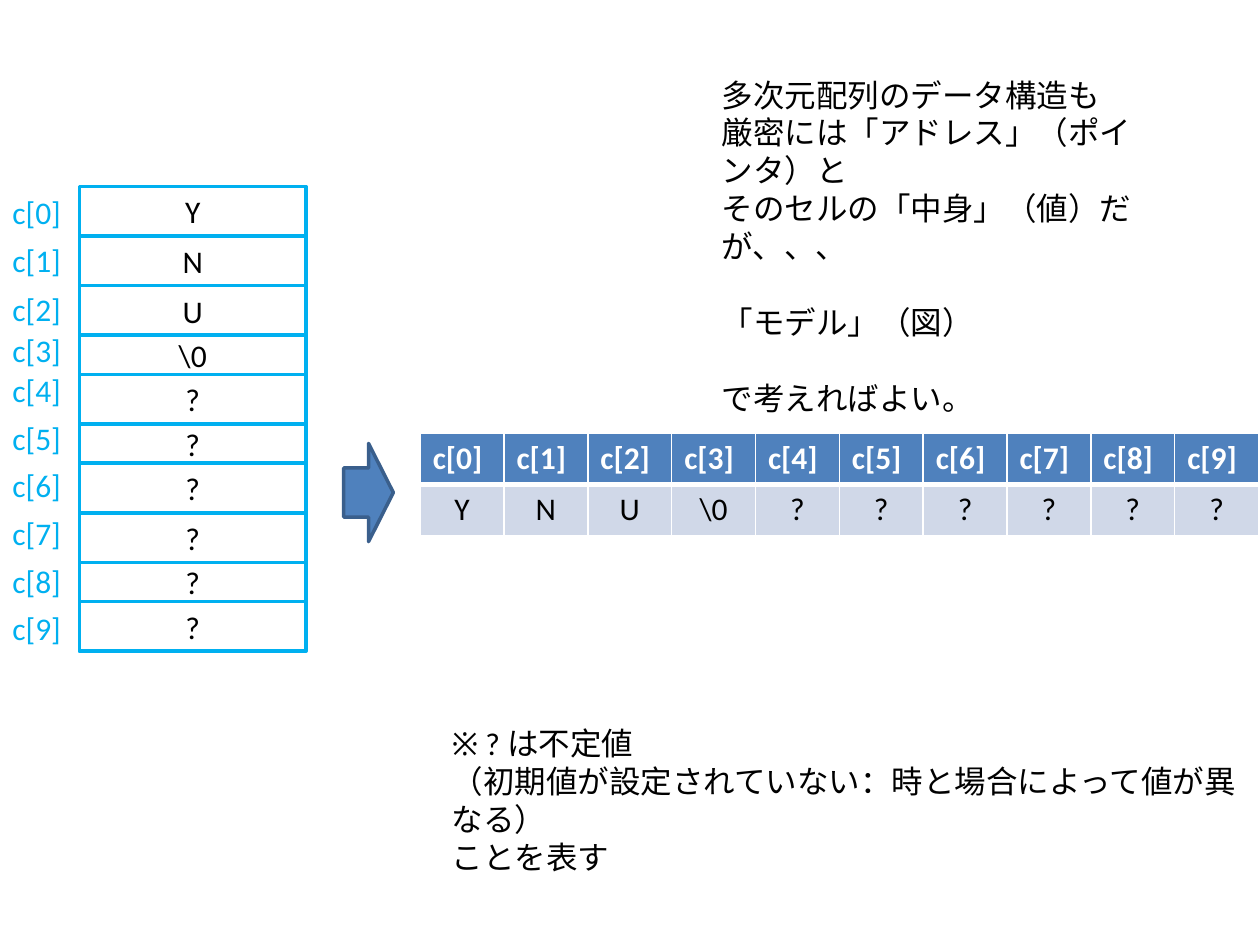
from itertools import accumulate

from lxml.etree import SubElement
from pptx import Presentation
from pptx.dml.color import RGBColor
from pptx.enum.shapes import MSO_SHAPE
from pptx.enum.text import MSO_ANCHOR, PP_ALIGN
from pptx.oxml.ns import qn
from pptx.util import Cm, Pt

COLORS = {
    "black": "000000",
    "white": "FFFFFF",
    "cyan": "00B0F0",
    "blue": "4F81BD",
    "dark_blue": "3A5F8C",
    "pale_blue": "D0D8E8",
}
VALUES = ["Y", "N", "U", "\\0"] + ["?"] * 6
NAMES = [f"c[{index}]" for index in range(len(VALUES))]

# Memory column, in centimetres
COLUMN_TOP = 3.76
TALL, SHORT = 1.0, 0.79
CELL_HEIGHTS = [SHORT if index in (3, 5, 8) else TALL for index in range(len(VALUES))]
CELL_TOPS = accumulate(CELL_HEIGHTS, initial=COLUMN_TOP)
LABEL_TOPS = accumulate([0.98] * 2 + [0.82] * 2 + [0.96] * 5, initial=COLUMN_TOP)


def color(name):
    return RGBColor.from_string(COLORS[name])


def write_text(frame, lines, ink="black", bold=False, align=PP_ALIGN.LEFT,
               wrap=True, spaced_lines=()):
    """Write one paragraph per line; spaced_lines get a line's gap above."""
    frame.word_wrap = wrap
    for index, line in enumerate(lines):
        paragraph = frame.paragraphs[0] if index == 0 else frame.add_paragraph()
        paragraph.alignment = align
        if index in spaced_lines:
            paragraph.space_before = Pt(22)
        run = paragraph.add_run()
        run.text = line
        run.font.name = "Calibri"
        run.font.size = Pt(18)
        run.font.bold = bold
        run.font.color.rgb = color(ink)


class ArraySlide:
    """Holds the current slide and draws its elements; lengths in centimetres."""

    def __init__(self, slide):
        self.slide = slide

    def text(self, lines, left, top, width, height, **style):
        box = self.slide.shapes.add_textbox(Cm(left), Cm(top), Cm(width), Cm(height))
        write_text(box.text_frame, lines, **style)

    def shape(self, kind, left, top, width, height, line, fill=None):
        shape = self.slide.shapes.add_shape(kind, Cm(left), Cm(top), Cm(width), Cm(height))
        shape.shadow.inherit = False
        shape.line.color.rgb = color(line)
        shape.line.width = Pt(2)
        if fill:
            shape.fill.solid()
            shape.fill.fore_color.rgb = color(fill)
        else:
            shape.fill.background()
        return shape

    def memory_cell(self, value, top, height):
        shape = self.shape(MSO_SHAPE.RECTANGLE, 1.6, top, 4.57, height, "cyan")
        shape.text_frame.vertical_anchor = MSO_ANCHOR.MIDDLE
        write_text(shape.text_frame, [value], align=PP_ALIGN.CENTER)

    def border(self, cell, side, points):
        line = SubElement(cell._tc.get_or_add_tcPr(), qn(f"a:ln{side}"), w=str(Pt(points)))
        fill = SubElement(line, qn("a:solidFill"))
        SubElement(fill, qn("a:srgbClr"), val=COLORS["white"])

    def table(self, rows, left, top, column_width, row_height):
        count = len(rows[0])
        table = self.slide.shapes.add_table(
            len(rows), count, Cm(left), Cm(top),
            Cm(column_width * count), Cm(row_height * len(rows))).table
        for column in table.columns:
            column.width = Cm(column_width)
        for row_index, row in enumerate(rows):
            table.rows[row_index].height = Cm(row_height)
            header = row_index == 0
            edges = {"L": 1, "R": 1, "T": 1 if header else 3, "B": 3 if header else 1}
            for column_index, value in enumerate(row):
                cell = table.cell(row_index, column_index)
                for side, points in edges.items():
                    self.border(cell, side, points)
                cell.fill.solid()
                cell.fill.fore_color.rgb = color("blue" if header else "pale_blue")
                write_text(cell.text_frame, [value], bold=header,
                           ink="white" if header else "black",
                           align=PP_ALIGN.LEFT if header else PP_ALIGN.CENTER)


def main():
    presentation = Presentation()
    presentation.slide_width = Cm(25.4)
    presentation.slide_height = Cm(19.05)
    page = ArraySlide(presentation.slides.add_slide(presentation.slide_layouts[6]))

    # Memory cells with their element names
    for value, top, height in zip(VALUES, CELL_TOPS, CELL_HEIGHTS):
        page.memory_cell(value, top, height)
    for name, top in zip(NAMES, LABEL_TOPS):
        page.text([name], 0, top, 1.5, 1.02, ink="cyan", wrap=False)

    # The same array as a table
    page.table([NAMES, VALUES], 8.47, 8.74, 1.69, 1.03)

    # Explanation and footnote
    page.text(
        ["多次元配列のデータ構造も",
         "厳密には「アドレス」（ポインタ）と",
         "そのセルの「中身」（値）だが、、、",
         "「モデル」（図）",
         "で考えればよい。"],
        14.3, 1.4, 9.35, 5.64, spaced_lines=(3, 4))
    page.text(
        ["※ ? は不定値",
         "（初期値が設定されていない：時と場合によって値が異なる）",
         "ことを表す"],
        8.86, 14.48, 16.54, 2.57)

    # Arrow from memory to table
    page.shape(MSO_SHAPE.RIGHT_ARROW, 6.93, 8.94, 1.0, 1.98, "dark_blue", fill="blue")

    presentation.save("out.pptx")


if __name__ == "__main__":
    main()
